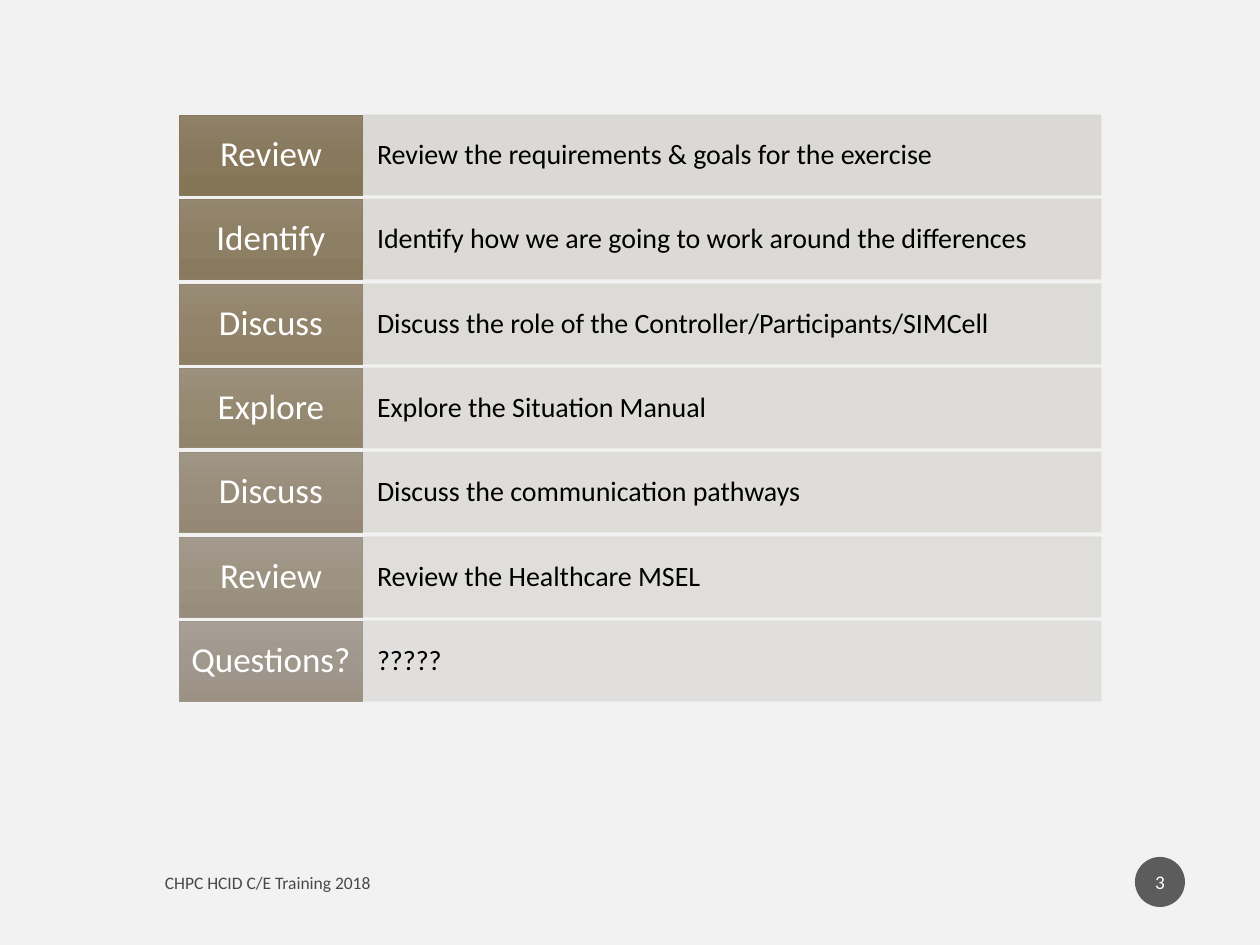
from copy import deepcopy
from dataclasses import dataclass

from lxml import etree
from pptx import Presentation
from pptx.dml.color import RGBColor
from pptx.enum.shapes import MSO_SHAPE
from pptx.enum.text import MSO_ANCHOR, PP_ALIGN
from pptx.oxml.ns import qn
from pptx.util import Pt

RECTANGLE, OVAL = MSO_SHAPE.RECTANGLE, MSO_SHAPE.OVAL
MIDDLE = MSO_ANCHOR.MIDDLE
LEFT, CENTER = PP_ALIGN.LEFT, PP_ALIGN.CENTER
PX = 914400 / 126


@dataclass(frozen=True)
class Theme:
    font: str = "Calibri"
    background: str = "F2F2F2"
    dark: str = "000000"
    light: str = "FFFFFF"
    badge: str = "1D1D1D"
    label_size: int = 20
    description_size: int = 16
    footer_size: int = 10
    number_size: int = 11
    line_width: float = 0.5


THEME = Theme()

# label, description, description fill, label gradient from top to bottom, label line
AGENDA = [
    ("Review", "Review the requirements & goals for the exercise",
     "D9D7D2", ("8F8269", "88795C", "847557"), "87795D"),
    ("Identify", "Identify how we are going to work around the differences",
     "DAD8D3", ("948770", "8D7F63", "897A5E"), "8C7E64"),
    ("Discuss", "Discuss the role of the Controller/Participants/SIMCell",
     "DBD9D5", ("998C76", "92846A", "8D7F64"), "91846B"),
    ("Explore", "Explore the Situation Manual",
     "DCDAD6", ("9C917E", "968972", "91836C"), "958973"),
    ("Discuss", "Discuss the communication pathways",
     "DDDBD8", ("A09685", "998E7B", "948875"), "998E7B"),
    ("Review", "Review the Healthcare MSEL",
     "DEDCD9", ("A39A8D", "9D9383", "978D7D"), "9C9384"),
    ("Questions?", "?????",
     "DFDDDB", ("A79F95", "A0988C", "9B9285"), "A0988C"),
]


def px(value):
    return round(value * PX)


def set_format(target, values):
    for name, value in values.items():
        setattr(target, name, value)


def set_solid(fill, color, opacity=100):
    fill.solid()
    fill.fore_color.rgb = RGBColor.from_string(color)
    return opacity


def set_opacity(element, percent):
    """Make every RGB colour inside the element partly transparent."""
    for color in element.iter(qn("a:srgbClr")):
        etree.SubElement(color, qn("a:alpha"), val=str(percent * 1000))


def set_vertical_gradient(shape, colors):
    shape.fill.gradient()
    shape.fill.gradient_angle = 270
    stop_list = next(shape.element.iter(qn("a:gsLst")))
    stop_list.append(deepcopy(stop_list[-1]))
    for index, (stop, color) in enumerate(zip(shape.fill.gradient_stops, colors)):
        stop.position = index / (len(colors) - 1)
        stop.color.rgb = RGBColor.from_string(color)


def add_panel(slide, kind, box, line=None):
    shape = slide.shapes.add_shape(kind, *map(px, box))
    shape.shadow.inherit = False
    if line:
        set_solid(shape.line.fill, line)
        shape.line.width = Pt(THEME.line_width)
    else:
        shape.line.fill.background()
    return shape


def write(shape, text, size, color, alignment, margins, line_spacing=1.0):
    """Put one line of text in the shape; margins are horizontal and vertical px."""
    horizontal, vertical = map(px, margins)
    frame = shape.text_frame
    set_format(frame, {
        "word_wrap": True, "vertical_anchor": MIDDLE,
        "margin_left": horizontal, "margin_right": horizontal,
        "margin_top": vertical, "margin_bottom": vertical,
    })
    paragraph = frame.paragraphs[0]
    set_format(paragraph, {"alignment": alignment, "line_spacing": line_spacing})
    run = paragraph.add_run()
    run.text = text
    set_format(run.font, {"name": THEME.font, "size": Pt(size)})
    run.font.color.rgb = RGBColor.from_string(color)


def add_agenda_row(slide, box, entry):
    label, description, fill, gradient, line = entry
    left, top, width, height = box
    label_width = width // 5

    panel = add_panel(slide, RECTANGLE,
                      (left + label_width, top, width - label_width, height), fill)
    set_solid(panel.fill, fill)
    set_opacity(panel.element.spPr, 90)
    write(panel, description, THEME.description_size, THEME.dark, LEFT, (14, 20), 0.9)

    panel = add_panel(slide, RECTANGLE, (left, top, label_width, height), line)
    set_vertical_gradient(panel, gradient)
    write(panel, label, THEME.label_size, THEME.light, CENTER, (10, 8), 0.9)


def add_agenda(slide, box, entries, row_height=80):
    left, top, width, height = box
    pitch = (height - row_height) / (len(entries) - 1)
    for index, entry in enumerate(entries):
        row_top = top + round(index * pitch)
        add_agenda_row(slide, (left, row_top, width, row_height), entry)


def add_footer(slide, box, text):
    footer = slide.shapes.add_textbox(*map(px, box))
    write(footer, text, THEME.footer_size, THEME.dark, LEFT, (13, 6))
    set_opacity(footer.element.txBody, 70)


def add_slide_number(slide, box, number):
    badge = add_panel(slide, OVAL, box)
    set_solid(badge.fill, THEME.badge)
    set_opacity(badge.element.spPr, 70)
    write(badge, str(number), THEME.number_size, THEME.light, CENTER, (2, 6))


def main():
    presentation = Presentation()
    presentation.slide_width, presentation.slide_height = px(1260), px(945)
    slide = presentation.slides.add_slide(presentation.slide_layouts[6])
    set_solid(slide.background.fill, THEME.background)
    add_agenda(slide, (179, 115, 922, 586), AGENDA)
    add_footer(slide, (152, 860, 628, 44), "CHPC HCID C/E Training 2018")
    add_slide_number(slide, (1135, 857, 50, 50), 3)
    presentation.save("out.pptx")


if __name__ == "__main__":
    main()
